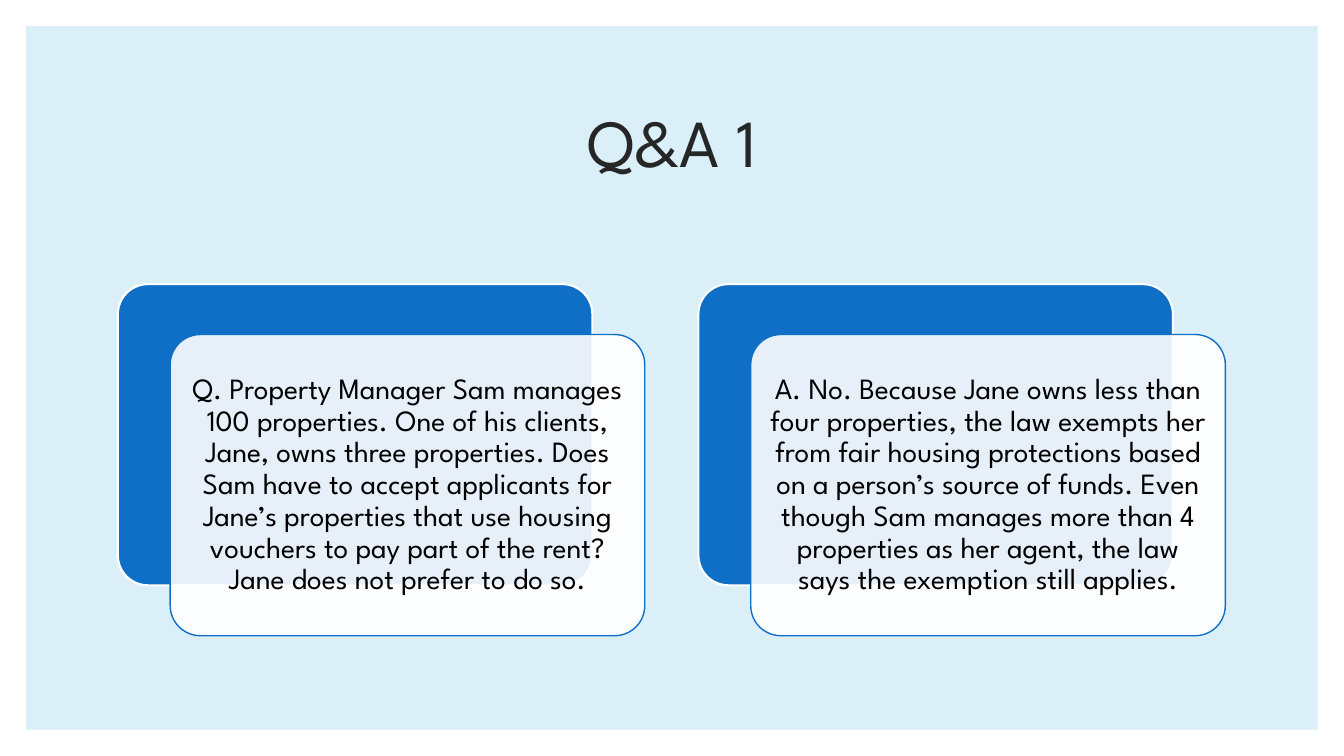
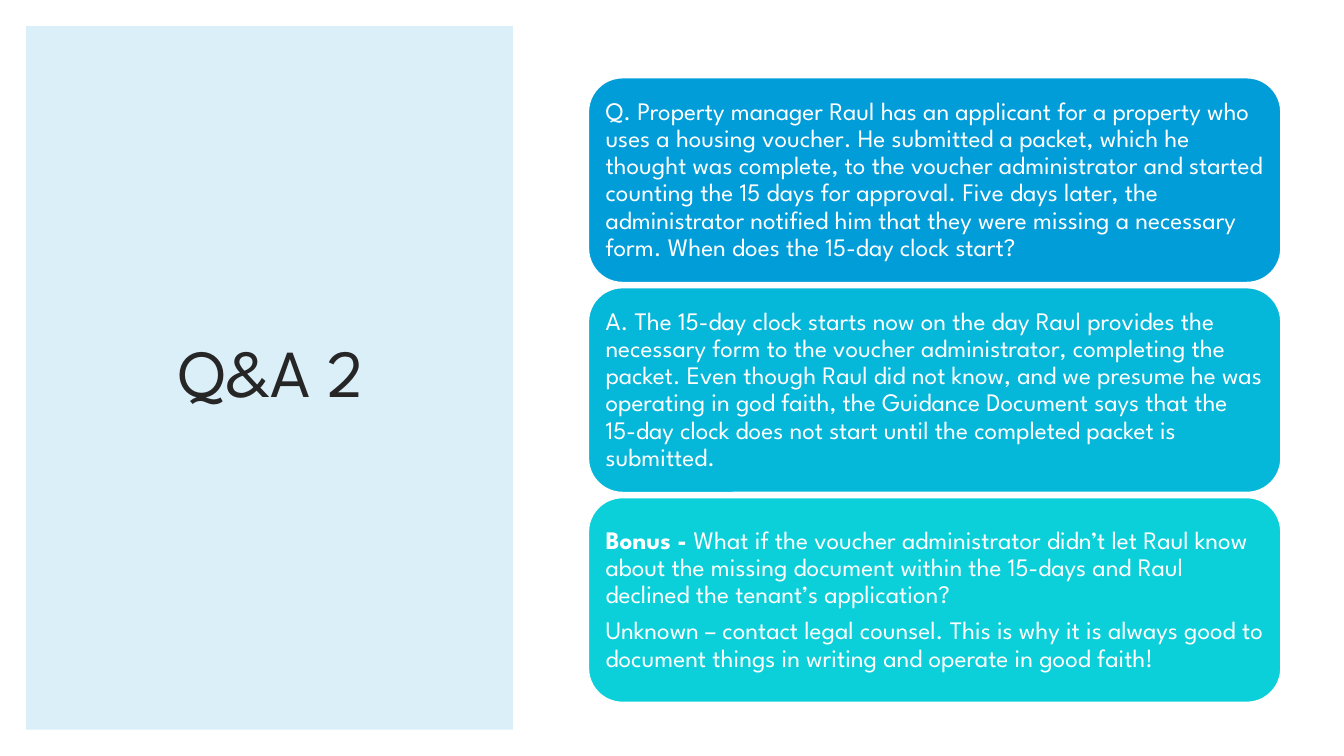
from lxml.etree import SubElement
from pptx import Presentation
from pptx.dml.color import RGBColor
from pptx.enum.shapes import MSO_SHAPE
from pptx.enum.text import MSO_ANCHOR, PP_ALIGN
from pptx.oxml.ns import qn
from pptx.util import Cm, Pt

FONT = "League Spartan"
WHITE = RGBColor(0xFF, 0xFF, 0xFF)
BLACK = RGBColor(0x00, 0x00, 0x00)
INK = RGBColor(0x26, 0x26, 0x26)
PALE = RGBColor(0xDB, 0xEF, 0xF9)
BLUE = RGBColor(0x0F, 0x6F, 0xC6)
SKY = RGBColor(0x00, 0x9D, 0xD9)
TEAL = RGBColor(0x05, 0xB7, 0xD9)
AQUA = RGBColor(0x0B, 0xD0, 0xD9)

SLIDE_W, SLIDE_H = 33.87, 19.05
MARGIN = 0.66
PANEL_H = SLIDE_H - 2 * MARGIN

CARDS = [
    "Q. Property Manager Sam manages 100 properties. One of his clients, Jane, "
    "owns three properties. Does Sam have to accept applicants for Jane’s "
    "properties that use housing vouchers to pay part of the rent? Jane does "
    "not prefer to do so.",
    "A. No. Because Jane owns less than four properties, the law exempts her "
    "from fair housing protections based on a person’s source of funds. Even "
    "though Sam manages more than 4 properties as her agent, the law says the "
    "exemption still applies.",
]

BARS = [
    (SKY, [[(
        "Q. Property manager Raul has an applicant for a property who uses a "
        "housing voucher. He submitted a packet, which he thought was complete, "
        "to the voucher administrator and started counting the 15 days for "
        "approval. Five days later, the administrator notified him that they "
        "were missing a necessary form. When does the 15-day clock start?", False)]]),
    (TEAL, [[(
        "A. The 15-day clock starts now on the day Raul provides the necessary "
        "form to the voucher administrator, completing the packet. Even though "
        "Raul did not know, and we presume he was operating in god faith, the "
        "Guidance Document says that the 15-day clock does not start until the "
        "completed packet is submitted.", False)]]),
    (AQUA, [
        [("Bonus - ", True),
         ("What if the voucher administrator didn’t let Raul know about the "
          "missing document within the 15-days and Raul declined the tenant’s "
          "application?", False)],
        [("Unknown – contact legal counsel. This is why it is always good to "
          "document things in writing and operate in good faith!", False)],
    ]),
]


def add_box(s, kind, box, fill, line=None, width=1, adj=None, alpha=None):
    sp = s.shapes.add_shape(kind, *map(Cm, box))
    sp.shadow.inherit = False
    sp.fill.solid()
    sp.fill.fore_color.rgb = fill
    if alpha is not None:
        clr = sp.fill._xPr.find(qn("a:solidFill"))[0]
        SubElement(clr, qn("a:alpha")).set("val", str(alpha * 1000))
    if line is None:
        sp.line.fill.background()
    else:
        sp.line.color.rgb = line
        sp.line.width = Pt(width)
    if adj is not None:
        sp.adjustments[0] = adj
    return sp


def write(sp, paras, size, color, align, inset, after=0):
    tf = sp.text_frame
    tf.word_wrap = True
    tf.vertical_anchor = MSO_ANCHOR.MIDDLE
    tf.margin_left = tf.margin_right = tf.margin_top = tf.margin_bottom = Cm(inset)
    for i, runs in enumerate(paras):
        p = tf.add_paragraph() if i else tf.paragraphs[0]
        p.alignment = align
        p.line_spacing = 0.9
        p.space_after = Pt(after)
        for text, bold in runs:
            r = p.add_run()
            r.text = text
            r.font.name = FONT
            r.font.size = Pt(size)
            r.font.bold = bold
            r.font.color.rgb = color


def add_slide(prs, title, title_box, panel_w):
    s = prs.slides.add_slide(prs.slide_layouts[6])
    add_box(s, MSO_SHAPE.RECTANGLE, (MARGIN, MARGIN, panel_w, PANEL_H), PALE)
    sp = s.shapes.add_textbox(*map(Cm, title_box))
    write(sp, [[(title, False)]], 48, INK, PP_ALIGN.CENTER, 0.25)
    return s


def add_cards(s):
    left, top, w, h = 2.97, 7.16, 11.96, 7.59
    step, dx, dy = 14.63, 1.32, 1.27
    for i, text in enumerate(CARDS):
        x = left + i * step
        add_box(s, MSO_SHAPE.ROUNDED_RECTANGLE, (x, top, w, h), BLUE, WHITE, 1.5, 0.1)
        front = add_box(s, MSO_SHAPE.ROUNDED_RECTANGLE, (x + dx, top + dy, w, h),
                        WHITE, BLUE, 1, 0.1, 90)
        write(front, [[(text, False)]], 21, BLACK, PP_ALIGN.CENTER, 0.22, 7.35)


def add_bars(s):
    left, top, w, h, gap = 14.83, 1.96, 17.45, 5.16, 0.13
    for i, (fill, paras) in enumerate(BARS):
        box = (left, top + i * (h + gap), w, h)
        bar = add_box(s, MSO_SHAPE.ROUNDED_RECTANGLE, box, fill, WHITE)
        write(bar, paras, 18, WHITE, PP_ALIGN.LEFT, 0.18, 6.3)


def main():
    prs = Presentation()
    prs.slide_width, prs.slide_height = Cm(SLIDE_W), Cm(SLIDE_H)
    add_cards(add_slide(prs, "Q&A 1", (2.97, 1.78, 27.94, 3.81), SLIDE_W - 2 * MARGIN))
    add_bars(add_slide(prs, "Q&A 2", (1.6, 1.55, 10.46, 15.85), 12.27))
    prs.save("out.pptx")


if __name__ == "__main__":
    main()
